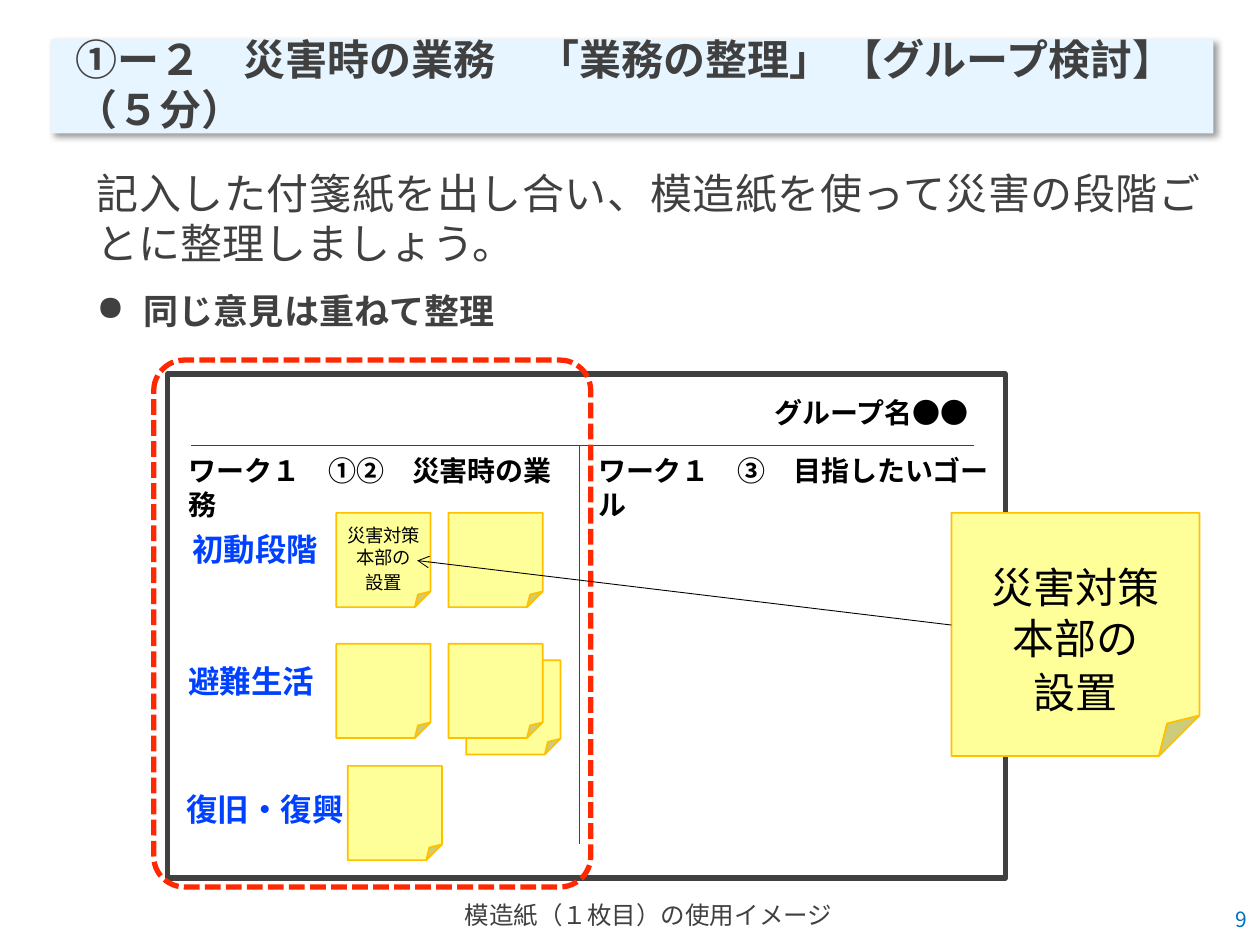
from dataclasses import dataclass

from lxml import etree
from pptx import Presentation
from pptx import util as u
from pptx.dml.color import RGBColor
from pptx.enum import dml, shapes, text
from pptx.oxml.ns import qn

FONT = "Noto Sans CJK JP"
COLOURS = {
    "title_fill": "E6F5FF", "grey": "404040", "black": "000000",
    "blue": "0041FF", "page_number": "0070C0", "red": "FF2800",
    "note": "FFFF99", "note_edge": "FFC000",
}
SHAPE = shapes.MSO_SHAPE
ALIGN = text.PP_ALIGN
NOTE_SIZE = 1.9
NOTE_TEXT = ["災害対策本部の", "設置"]


@dataclass
class Area:
    """A place on the slide, in centimetres."""
    left: float
    top: float
    width: float
    height: float

    def lengths(self) -> list:
        return [u.Cm(n) for n in (self.left, self.top, self.width, self.height)]


@dataclass
class Style:
    size: float
    colour: str = "black"
    bold: bool = False
    align: ALIGN = ALIGN.LEFT
    after: float = 0


def rgb(name: str) -> RGBColor:
    return RGBColor.from_string(COLOURS[name])


def write(frame, lines: list, style: Style) -> None:
    frame.word_wrap = True
    for index, line in enumerate(lines):
        paragraph = frame.paragraphs[0] if index == 0 else frame.add_paragraph()
        paragraph.text = line
        format_paragraph(paragraph, style)


def format_paragraph(paragraph, style: Style) -> None:
    paragraph.alignment = style.align
    paragraph.space_after = u.Pt(style.after)
    font = paragraph.font
    font.size, font.bold, font.name = u.Pt(style.size), style.bold, FONT
    font.color.rgb = rgb(style.colour)
    defaults = paragraph._p.pPr.find(qn("a:defRPr"))
    etree.SubElement(defaults, qn("a:ea"), typeface=FONT)


def add_text(page, area: Area, lines: list, style: Style):
    box = page.shapes.add_textbox(*area.lengths())
    write(box.text_frame, lines, style)
    return box.text_frame


def add_bullet(paragraph, mark: str, indent: float) -> None:
    properties = paragraph._p.pPr
    properties.set("marL", str(u.Cm(indent)))
    properties.set("indent", str(-u.Cm(indent)))
    bullet = etree.Element(qn("a:buChar"), char=mark)
    properties.find(qn("a:defRPr")).addprevious(bullet)


def add_outline(page, kind: SHAPE, area: Area, fill: str = "",
                line: str = "", width: float = 1):
    shape = page.shapes.add_shape(kind, *area.lengths())
    shape.shadow.inherit = False
    if fill:
        shape.fill.solid()
        shape.fill.fore_color.rgb = rgb(fill)
    else:
        shape.fill.background()
    if line:
        shape.line.color.rgb = rgb(line)
        shape.line.width = u.Pt(width)
    else:
        shape.line.fill.background()
    return shape


def add_note(page, area: Area) -> None:
    add_outline(page, SHAPE.FOLDED_CORNER, area, "note", "note_edge")


def add_line(page, start: tuple, end: tuple, colour: str):
    line = page.shapes.add_connector(
        shapes.MSO_CONNECTOR.STRAIGHT, *[u.Cm(n) for n in start + end])
    line.line.color.rgb = rgb(colour)
    line.line.width = u.Pt(0.5)
    etree.SubElement(line._element.spPr, qn("a:effectLst"))
    return line


def add_title(page) -> None:
    title = add_outline(page, SHAPE.RECTANGLE, Area(1.02, 0.79, 23.44, 1.9),
                        "title_fill")
    effects = title._element.spPr.find(qn("a:effectLst"))
    shadow = etree.SubElement(
        effects, qn("a:outerShdw"), blurRad=str(u.Pt(4)), dist=str(u.Pt(3)),
        dir="2700000", algn="tl", rotWithShape="0")
    colour = etree.SubElement(shadow, qn("a:srgbClr"), val=COLOURS["black"])
    etree.SubElement(colour, qn("a:alpha"), val="40000")
    frame = title.text_frame
    frame.vertical_anchor = text.MSO_ANCHOR.MIDDLE
    frame.margin_left, frame.margin_right = u.Cm(0.5), u.Cm(0.25)
    frame.margin_top, frame.margin_bottom = u.Cm(0.1), u.Cm(0.2)
    write(frame, ["①ー２\u3000災害時の業務\u3000「業務の整理」 【グループ検討】（５分）".replace("\u3000", "　")],
          Style(24, "grey", True, after=12))


def add_instructions(page) -> None:
    frame = add_text(
        page, Area(1.7, 3.25, 22.76, 3.58),
        ["記入した付箋紙を出し合い、模造紙を使って災害の段階ごとに整理しましょう。"],
        Style(24, "grey", align=ALIGN.JUSTIFY, after=12))
    point = frame.add_paragraph()
    point.text = "同じ意見は重ねて整理"
    format_paragraph(point, Style(20, "grey", True, ALIGN.JUSTIFY, 12))
    add_bullet(point, "●", 0.95)


def add_board(page) -> None:
    add_outline(page, SHAPE.RECTANGLE, Area(3.38, 7.54, 16.89, 10.16),
                line="grey", width=3)
    add_line(page, (3.86, 8.97), (19.63, 8.97), "grey")
    add_line(page, (11.68, 8.97), (11.68, 17.02), "grey")
    headings = [
        (15.37, 7.85, 6.32, "グループ名●●"),
        (3.56, 9.02, 8.03, "ワーク１　①②　災害時の業務"),
        (11.81, 9.02, 8.81, "ワーク１　③　目指したいゴール"),
    ]
    for left, top, width, heading in headings:
        add_text(page, Area(left, top, width, 0.94), [heading],
                 Style(16, bold=True))

    focus = add_outline(page, SHAPE.ROUNDED_RECTANGLE,
                        Area(3.1, 7.26, 8.81, 10.62), line="red", width=3)
    focus.adjustments[0] = 0.07
    focus.line.dash_style = dml.MSO_LINE.SQUARE_DOT

    stages = [(2.95, 10.57, "初動段階"), (2.87, 13.23, "避難生活"),
              (3.15, 15.8, "復旧・復興")]
    for left, top, stage in stages:
        add_text(page, Area(left, top, 4.39, 1.02), [stage],
                 Style(18, "blue", True, ALIGN.CENTER))
    add_text(page, Area(8.92, 18.01, 8.31, 0.86),
             ["模造紙（１枚目）の使用イメージ"],
             Style(14, "grey", align=ALIGN.CENTER))


def add_notes(page) -> None:
    places = [(9.4, 13.31)]
    places += [(left, top) for top in (10.34, 12.98) for left in (6.78, 9.04)]
    places.append((7.01, 15.44))
    for left, top in places:
        add_note(page, Area(left, top, NOTE_SIZE, NOTE_SIZE))
    add_note(page, Area(19.18, 10.34, 5, 4.9))
    for area, size in ((Area(19.53, 11.2, 4.29, 3.4), 24),
                       (Area(6.63, 10.44, 2.21, 1.68), 10.5)):
        add_text(page, area, NOTE_TEXT,
                 Style(size, align=ALIGN.CENTER, after=2))
    arrow = add_line(page, (19.18, 12.6), (8.41, 11.3), "black")
    etree.SubElement(arrow.line._get_or_add_ln(), qn("a:tailEnd"), type="arrow")


def main() -> None:
    deck = Presentation()
    deck.slide_width, deck.slide_height = u.Cm(25.4), u.Cm(19.05)
    page = deck.slides.add_slide(deck.slide_layouts[6])
    add_title(page)
    add_instructions(page)
    add_board(page)
    add_notes(page)
    number = add_text(page, Area(19.68, 18.01, 5.72, 1.02), ["9"],
                      Style(12, "page_number", align=ALIGN.RIGHT))
    number.vertical_anchor = text.MSO_ANCHOR.MIDDLE
    deck.save("out.pptx")


if __name__ == "__main__":
    main()
